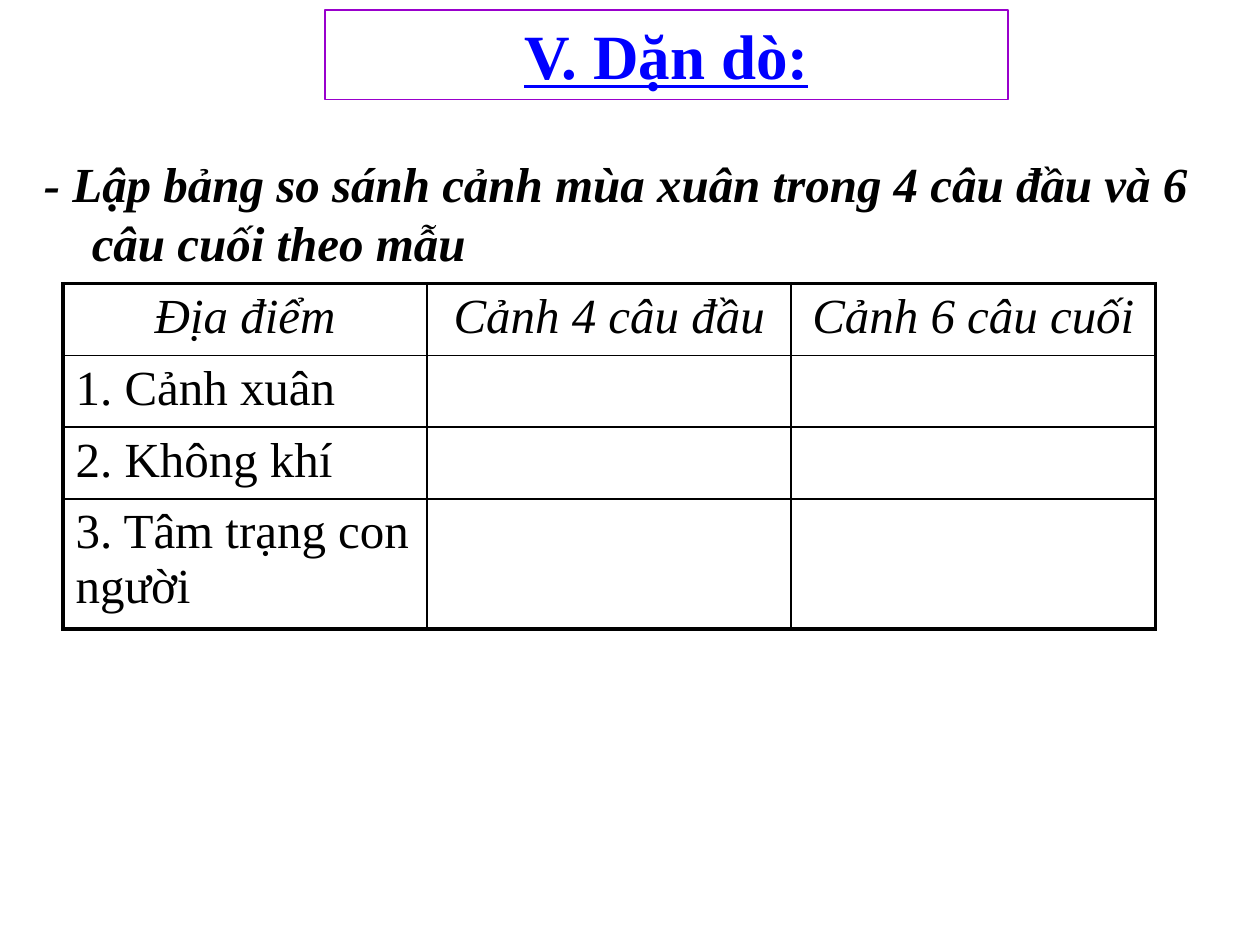
from lxml import etree
from pptx import Presentation
from pptx.dml.color import RGBColor
from pptx.enum.shapes import MSO_SHAPE
from pptx.enum.text import MSO_ANCHOR, PP_ALIGN
from pptx.oxml.ns import qn
from pptx.util import Inches, Pt

RECTANGLE = MSO_SHAPE.RECTANGLE
TOP = MSO_ANCHOR.TOP
CENTER, LEFT = PP_ALIGN.CENTER, PP_ALIGN.LEFT
COLORS = {"black": "000000", "white": "FFFFFF", "blue": "0000FF", "purple": "9900CC"}


def write(frame, text, size, color, align, space, bold=False, italic=False, underline=False):
    frame.word_wrap = True
    frame.text = text
    para = frame.paragraphs[0]
    para.alignment = align
    para.space_before = Pt(space)
    for span in para.runs:
        span.font.name = "Times New Roman"
        span.font.size = Pt(size)
        span.font.bold = bold
        span.font.italic = italic
        span.font.underline = underline
        span.font.color.rgb = RGBColor.from_string(COLORS[color])
    return para


def add_border(cell, side, width):
    line = etree.SubElement(cell._tc.get_or_add_tcPr(), qn(f"a:ln{side}"), w=str(Pt(width)))
    fill = etree.SubElement(line, qn("a:solidFill"))
    etree.SubElement(fill, qn("a:srgbClr"), val=COLORS["black"])


deck = Presentation()
deck.slide_width, deck.slide_height = Inches(10), Inches(7.5)
page = deck.slides.add_slide(deck.slide_layouts[6])

title = page.shapes.add_shape(RECTANGLE, Inches(2.58), Inches(0.08), Inches(5.42), Inches(0.71))
title.shadow.inherit = False
title.fill.solid()
title.fill.fore_color.rgb = RGBColor.from_string(COLORS["white"])
title.line.color.rgb = RGBColor.from_string(COLORS["purple"])
title.line.width = Pt(0.75)
title.text_frame.vertical_anchor = TOP
write(title.text_frame, "V. Dặn dò:", 36, "blue", CENTER, 18, bold=True, underline=True)

task = page.shapes.add_textbox(Inches(0.25), Inches(1.17), Inches(9.75), Inches(1.04))
para = write(task.text_frame,
             "- Lập bảng so sánh cảnh mùa xuân trong 4 câu đầu và 6 câu cuối theo mẫu",
             28, "black", LEFT, 14, bold=True, italic=True)
indent = para._p.get_or_add_pPr()
indent.set("marL", str(Inches(0.38)))
indent.set("indent", str(Inches(-0.38)))

rows = [
    ["Địa điểm", "Cảnh 4 câu đầu", "Cảnh 6 câu cuối"],
    ["1. Cảnh xuân", "", ""],
    ["2. Không khí", "", ""],
    ["3. Tâm trạng con người", "", ""],
]
heights = [0.57, 0.57, 0.57, 1.02]
table = page.shapes.add_table(len(rows), 3, Inches(0.5), Inches(2.25),
                              Inches(8.67), Inches(sum(heights))).table
table.first_row = False
table.horz_banding = False
for column in table.columns:
    column.width = Inches(2.89)
for row, texts in enumerate(rows):
    table.rows[row].height = Inches(heights[row])
    for col, text in enumerate(texts):
        cell = table.cell(row, col)
        outer = {"L": col == 0, "R": col == 2, "T": row == 0, "B": row == len(rows) - 1}
        for side, is_outer in outer.items():
            add_border(cell, side, 2.25 if is_outer else 1)
        cell.fill.background()
        if text:
            write(cell.text_frame, text, 28, "black", CENTER if row == 0 else LEFT, 5.6,
                  italic=row == 0)

deck.save("out.pptx")
